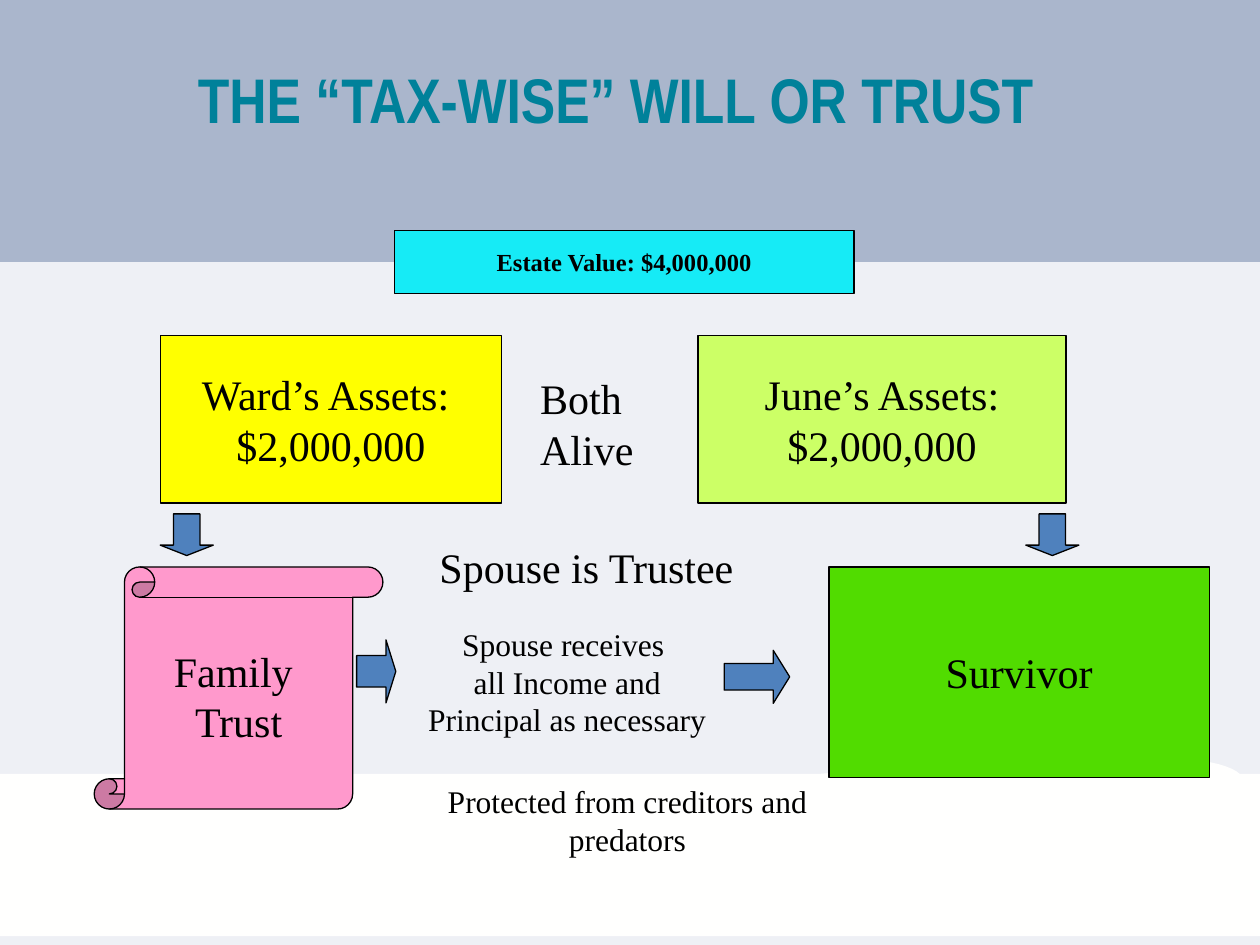
from pptx import Presentation
from pptx.dml.color import RGBColor
from pptx.enum.shapes import MSO_SHAPE
from pptx.enum.text import MSO_ANCHOR, PP_ALIGN
from pptx.util import Cm, Pt

RECTANGLE = MSO_SHAPE.RECTANGLE
SCROLL = MSO_SHAPE.VERTICAL_SCROLL
RIGHT_ARROW = MSO_SHAPE.RIGHT_ARROW
DOWN_ARROW = MSO_SHAPE.DOWN_ARROW
TOP, MIDDLE = MSO_ANCHOR.TOP, MSO_ANCHOR.MIDDLE
LEFT, CENTER = PP_ALIGN.LEFT, PP_ALIGN.CENTER

color = RGBColor.from_string


def paint(shape, fill, outline=None):
    shape.shadow.inherit = False
    shape.fill.solid()
    shape.fill.fore_color.rgb = color(fill)
    if outline:
        shape.line.color.rgb = color(outline)
        shape.line.width = Pt(0.75)
    else:
        shape.line.fill.background()


def write(shape, lines, size, align=CENTER, anchor=MIDDLE, bold=False,
          font="Times New Roman", ink="000000", spacing=None):
    """Put one paragraph per line into the shape."""
    frame = shape.text_frame
    frame.word_wrap = True
    frame.vertical_anchor = anchor
    frame.text = "\n".join(lines)
    for para in frame.paragraphs:
        para.alignment = align
        para.line_spacing = spacing
        for name, value in {"name": font, "size": Pt(size), "bold": bold}.items():
            setattr(para.font, name, value)
        para.font.color.rgb = color(ink)


deck = Presentation()
deck.slide_width, deck.slide_height = Cm(25.4), Cm(19.05)
page = deck.slides.add_slide(deck.slide_layouts[6])
shapes = page.shapes

# Background bands
for top, height, fill in [(4.88, 14.17, "EEF0F5"), (0, 5.28, "AAB6CC")]:
    paint(shapes.add_shape(RECTANGLE, 0, Cm(top), Cm(25.4), Cm(height)), fill)

# Pale hill: each curve holds two control points and an end point
hill = [(25.4, 15.6), (24.99, 15.6)]
hill_curves = [
    [(24.77, 15.39), (23.93, 15.19), (22.83, 15.39)],
    [(22.73, 14.94), (21.21, 14.58), (19.28, 15.11)],
    [(18.21, 15.42), (17.27, 15.54), (16.54, 15.6)],
]
steps = 12
for curve in hill_curves:
    controls = [hill[-1], *curve]
    for step in range(1, steps + 1):
        t = step / steps
        weights = [(1 - t) ** 3, 3 * t * (1 - t) ** 2, 3 * t**2 * (1 - t), t**3]
        hill.append(tuple(
            sum(weight * point[axis] for weight, point in zip(weights, controls))
            for axis in (0, 1)))
hill += [(0, 15.6), (0, 18.87)]
builder = shapes.build_freeform(Cm(25.4), Cm(18.87))
builder.add_line_segments([(Cm(x), Cm(y)) for x, y in hill], close=True)
paint(builder.convert_to_shape(), "FFFFFE")

title = shapes.add_textbox(Cm(2.11), Cm(1.27), Cm(20.62), Cm(2.84))
write(title, ["THE “TAX-WISE” WILL OR TRUST"], 36, anchor=TOP, bold=True,
      font="Arial Narrow", ink="00819A", spacing=0.9)

# Outlined boxes
boxes = [
    (RECTANGLE, (7.95, 4.65, 9.27, 1.27), "16EBF6", ["Estate Value: $4,000,000"], 14, True),
    (RECTANGLE, (3.23, 6.76, 6.88, 3.38), "FFFF00", ["Ward’s Assets: ", "$2,000,000"], 24, False),
    (RECTANGLE, (14.07, 6.76, 7.42, 3.38), "CCFF66", ["June’s Assets:", "$2,000,000"], 24, False),
    (SCROLL, (1.9, 11.43, 5.82, 4.88), "FF99CC", ["Family ", "Trust"], 24, False),
    (RECTANGLE, (16.71, 11.43, 7.67, 4.24), "51DC00", ["Survivor"], 24, False),
]
for kind, place, fill, lines, size, bold in boxes:
    box = shapes.add_shape(kind, *map(Cm, place))
    paint(box, fill, "000000")
    write(box, lines, size, bold=bold)

# Captions
captions = [
    ((10.64, 7.39, 3, 2.29), ["Both", "Alive"], 24, LEFT),
    ((8.61, 10.8, 8.1, 1.27), ["Spouse is Trustee"], 24, LEFT),
    ((8.26, 12.47, 6.35, 2.57),
     ["Spouse receives ", "all Income and", "Principal as necessary"], 18, CENTER),
    ((7.72, 15.65, 9.86, 1.8), ["Protected from creditors and predators"], 18, CENTER),
]
for place, lines, size, align in captions:
    write(shapes.add_textbox(*map(Cm, place)), lines, size, align, TOP)

# Block arrows
arrows = [
    (RIGHT_ARROW, (7.19, 12.9, 0.79, 1.27), 0.25),
    (RIGHT_ARROW, (14.6, 13.11, 1.32, 1.07), 0.31),
    (DOWN_ARROW, (3.23, 10.36, 1.07, 0.84), 0.25),
    (DOWN_ARROW, (20.68, 10.36, 1.07, 0.84), 0.25),
]
for kind, place, head in arrows:
    arrow = shapes.add_shape(kind, *map(Cm, place))
    arrow.adjustments[1] = head
    paint(arrow, "4F81BD", "000000")

deck.save("out.pptx")
